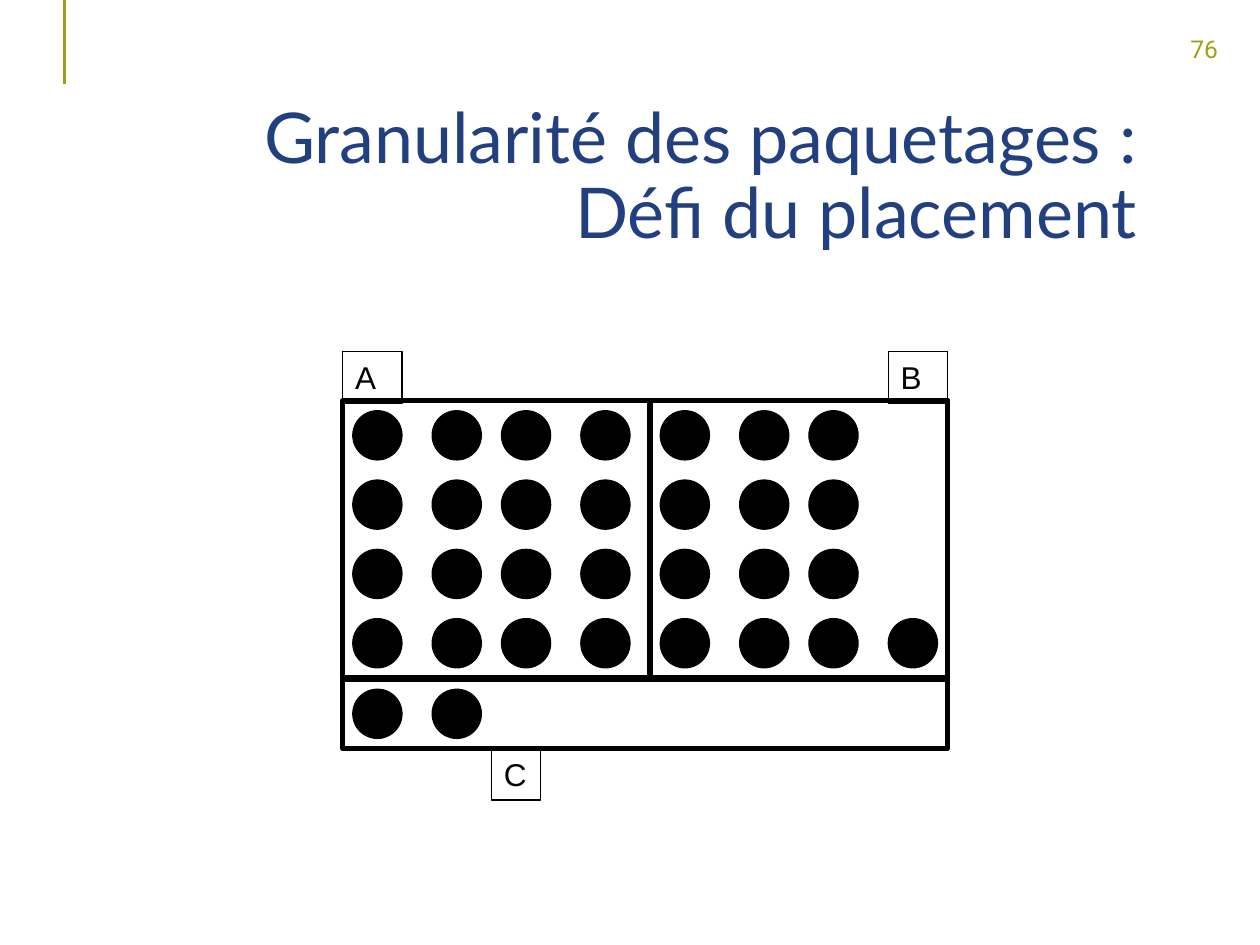
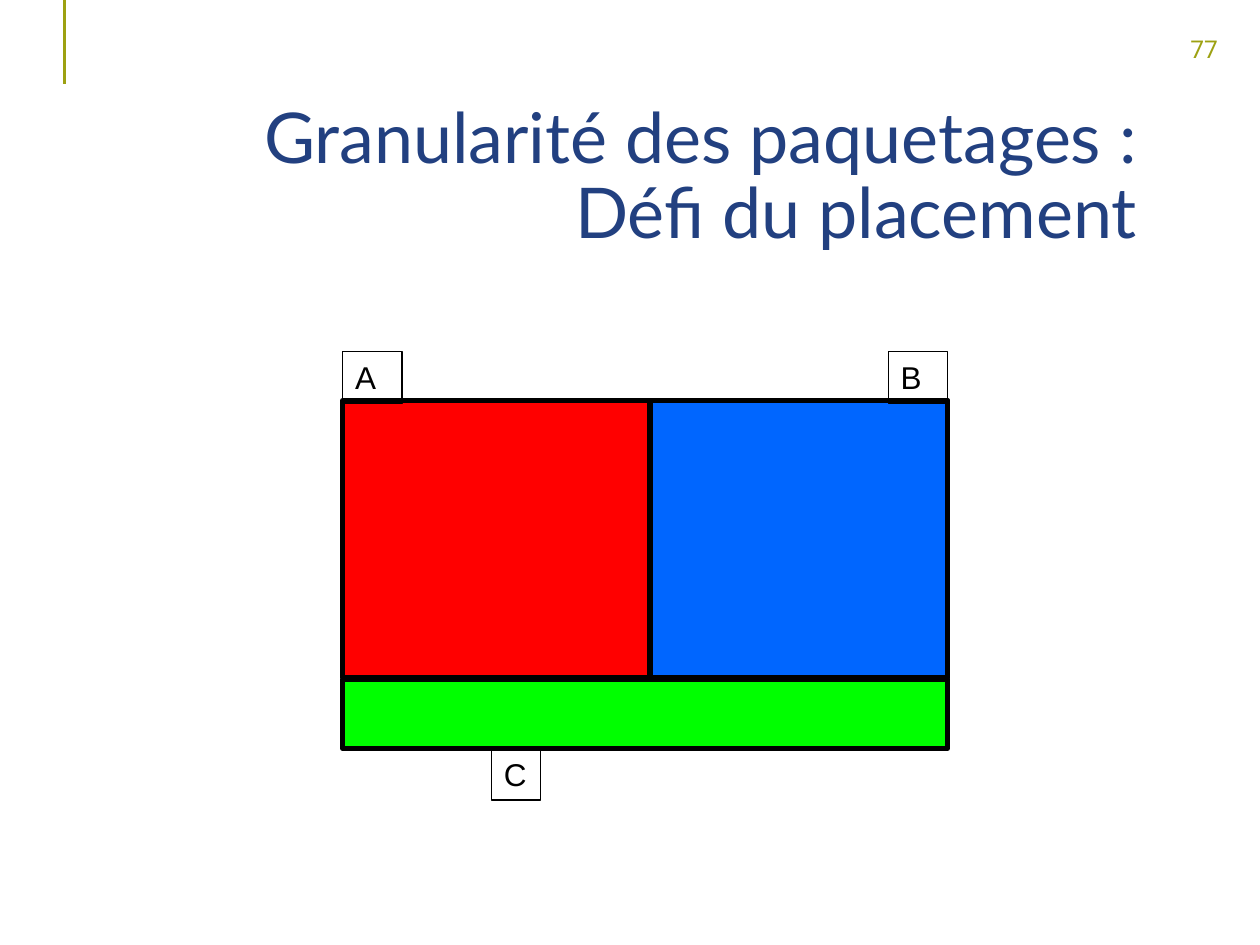
import pptx
import pptx.util
import pptx.dml.color
import pptx.enum.shapes
import pptx.enum.text
import lxml.etree

Inches, Pt = pptx.util.Inches, pptx.util.Pt
SHAPE = pptx.enum.shapes.MSO_SHAPE
ALIGN = pptx.enum.text.PP_ALIGN
ANCHOR = pptx.enum.text.MSO_ANCHOR

COLORS = {"olive": "9DA112", "navy": "224080", "ink": "000000", "paper": "FFFFFF",
          "red": "FF0000", "blue": "0066FF", "green": "00FF00"}
TITLE = ["Granularité des paquetages :", "Défi du placement"]

# Package board: its box, then regions and labels relative to its corner
BOARD = (2.72, 3.18)
# A runs the full width, behind B
REGIONS = {"A": (0, 0, 4.8, 2.2), "B": (2.44, 0, 2.36, 2.2), "C": (0, 2.21, 4.8, 0.55)}
LABELS = {"A": (0, -0.39, 0.47, 0.41), "B": (4.33, -0.39, 0.47, 0.41),
          "C": (1.18, 2.76, 0.39, 0.41)}
DOTS_PER_ROW = {"A": [4, 4, 4, 4], "B": [3, 3, 3, 4], "C": [2]}
DOT_COLUMNS = [0.08, 0.71, 1.26, 1.89]
DOT_TOP, DOT_PITCH, DOT_SIZE = 0.08, 0.55, 0.39


def rgb(color):
    return pptx.dml.color.RGBColor.from_string(COLORS[color])


def add_figure(slide, kind, box, fill=None, weight=0.75):
    figure = slide.shapes.add_shape(kind, *map(Inches, box))
    figure.shadow.inherit = False
    if fill:
        figure.fill.solid()
        figure.fill.fore_color.rgb = rgb(fill)
    else:
        figure.fill.background()
    figure.line.color.rgb = rgb("ink")
    figure.line.width = Pt(weight)
    return figure


def write(frame, lines, font, size, color, align=ALIGN.LEFT, anchor=ANCHOR.TOP,
          wrap=True, spacing=None):
    frame.word_wrap = wrap
    frame.vertical_anchor = anchor
    paragraph = frame.paragraphs[0]
    paragraph.alignment = align
    if spacing:
        paragraph.line_spacing = spacing
    for index, line in enumerate(lines):
        if index:
            paragraph.add_line_break()
        run = paragraph.add_run()
        run.text = line
        run.font.name = font
        run.font.size = Pt(size)
        run.font.color.rgb = rgb(color)


def add_text(slide, box, lines, **style):
    write(slide.shapes.add_textbox(*map(Inches, box)).text_frame, lines, **style)


def add_page_frame(slide, number):
    # Accent rule at the top left
    rule = slide.shapes.add_connector(pptx.enum.shapes.MSO_CONNECTOR.STRAIGHT,
                                      Inches(0.51), 0, Inches(0.51), Inches(0.67))
    rule.line.color.rgb = rgb("olive")
    rule.line.width = Pt(1.5)
    properties = rule._element.spPr
    lxml.etree.SubElement(properties, pptx.oxml.ns.qn("a:effectLst"))
    # Page number and title
    add_text(slide, (9.35, 0.22, 0.43, 0.33), [str(number)], font="Roboto", size=14,
             color="olive", wrap=False)
    add_text(slide, (1.06, 0.79, 8.06, 1.25), TITLE, font="Lato", size=40, color="navy",
             align=ALIGN.RIGHT, anchor=ANCHOR.MIDDLE, spacing=0.9)


def add_dots(slide, left, top, row_counts):
    for row, count in enumerate(row_counts):
        for column in DOT_COLUMNS[:count]:
            box = (left + column, top + DOT_TOP + row * DOT_PITCH, DOT_SIZE, DOT_SIZE)
            add_figure(slide, SHAPE.OVAL, box, "ink")


def add_board(slide, corner, fills, with_dots):
    left, top = corner
    for name, (x, y, width, height) in REGIONS.items():
        add_figure(slide, SHAPE.RECTANGLE, (left + x, top + y, width, height),
                   fills[name], weight=3)
        if with_dots:
            add_dots(slide, left + x, top + y, DOTS_PER_ROW[name])
    for name, (x, y, width, height) in LABELS.items():
        label = add_figure(slide, SHAPE.RECTANGLE, (left + x, top + y, width, height))
        write(label.text_frame, [name], font="Arial", size=18, color="ink")


def add_placement_slide(deck, number, fills, with_dots):
    slide = deck.slides.add_slide(deck.slide_layouts[6])
    add_page_frame(slide, number)
    add_board(slide, BOARD, fills, with_dots)


def main():
    deck = pptx.Presentation()
    deck.slide_width, deck.slide_height = Inches(10), Inches(7.5)
    add_placement_slide(deck, 76, dict.fromkeys(REGIONS, "paper"), with_dots=True)
    add_placement_slide(deck, 77, {"A": "red", "B": "blue", "C": "green"}, with_dots=False)
    deck.save("out.pptx")


if __name__ == "__main__":
    main()
